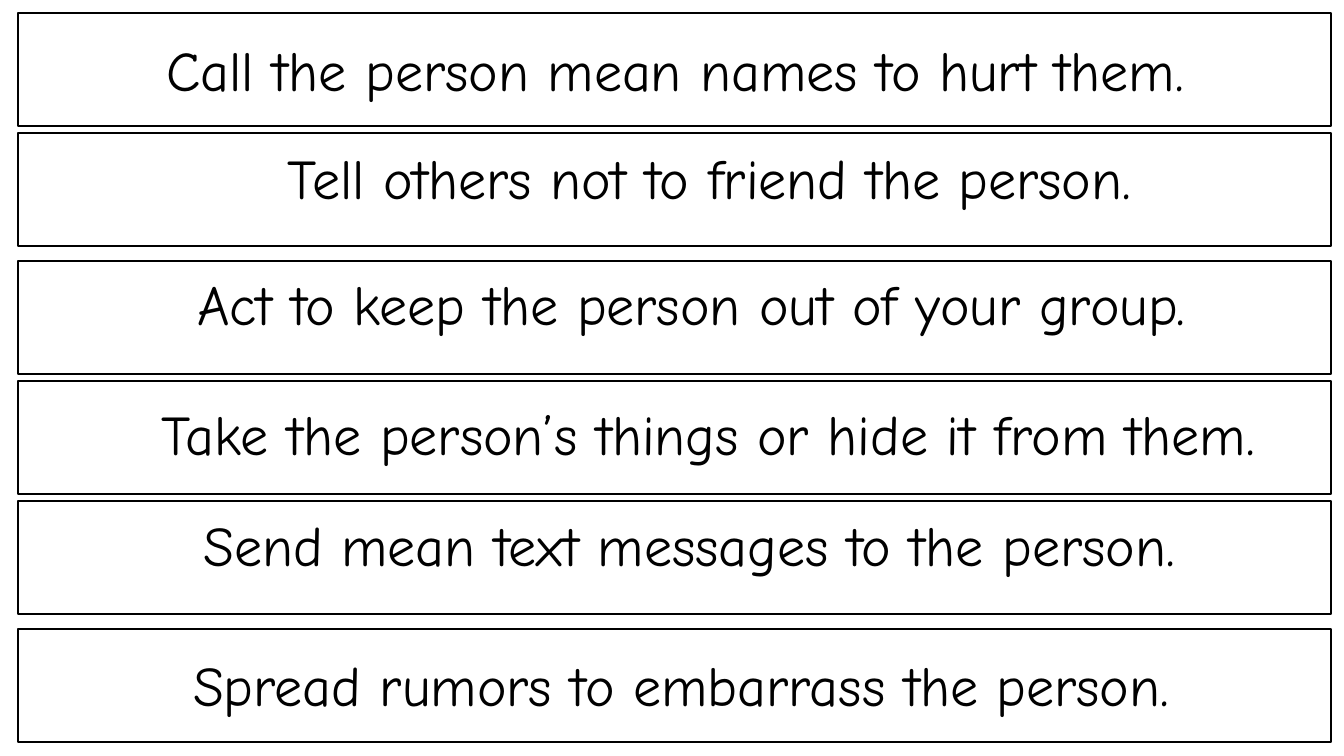
"""Build a slide of six framed sentence strips about unkind behaviour."""
from dataclasses import dataclass

import pptx
import pptx.dml.color
import pptx.enum.shapes
import pptx.enum.text
import pptx.slide
import pptx.util

PX = 9144
COLOURS = {"paper": "FFFFFF", "ink": "000000"}
FRAME_LEFT, FRAME_WIDTH, FRAME_HEIGHT = 18, 1302, 112
TEXT_WIDTH, TEXT_HEIGHT = 1285, 77


@dataclass(frozen=True)
class Strip:
    """One sentence with the places of its frame and its text, in px."""
    frame_top: int
    text_left: int
    text_top: int
    sentence: str


STRIPS = [
    Strip(13, 27, 30, "Call the person mean names to hurt them."),
    Strip(132, 61, 137, "Tell others not to friend the person."),
    Strip(259, 43, 262, "Act to keep the person out of your group."),
    Strip(378, 60, 391, "Take the person’s things or hide it from them."),
    Strip(497, 41, 502, "Send mean text messages to the person."),
    Strip(624, 33, 640, "Spread rumors to embarrass the person."),
]


def colour(name: str) -> pptx.dml.color.RGBColor:
    """Look up a named colour."""
    return pptx.dml.color.RGBColor.from_string(COLOURS[name])


def draw_frame(page: pptx.slide.Slide, strip: Strip) -> None:
    """Draw the outlined rectangle of a strip."""
    frame = page.shapes.add_shape(
        pptx.enum.shapes.MSO_SHAPE.RECTANGLE,
        FRAME_LEFT * PX, strip.frame_top * PX, FRAME_WIDTH * PX, FRAME_HEIGHT * PX)
    frame.shadow.inherit = False
    frame.fill.solid()
    frame.fill.fore_color.rgb = colour("paper")
    frame.line.color.rgb = colour("ink")
    frame.line.width = pptx.util.Pt(1)


def draw_sentence(page: pptx.slide.Slide, strip: Strip) -> None:
    """Write the centred sentence of a strip."""
    box = page.shapes.add_textbox(
        strip.text_left * PX, strip.text_top * PX, TEXT_WIDTH * PX, TEXT_HEIGHT * PX)
    box.text_frame.word_wrap = True
    box.text_frame.auto_size = pptx.enum.text.MSO_AUTO_SIZE.SHAPE_TO_FIT_TEXT
    para = box.text_frame.paragraphs[0]
    para.text = strip.sentence
    para.alignment = pptx.enum.text.PP_ALIGN.CENTER
    para.font.name = "Comic Neue"
    para.font.size = pptx.util.Pt(40)
    para.font.color.rgb = colour("ink")


def main() -> None:
    """Build and save the deck."""
    deck = pptx.Presentation()
    deck.slide_width, deck.slide_height = 1333 * PX, 750 * PX
    page = deck.slides.add_slide(deck.slide_layouts.get_by_name("Blank"))
    for strip in STRIPS:
        draw_frame(page, strip)
        draw_sentence(page, strip)
    deck.save("out.pptx")


if __name__ == "__main__":
    main()
